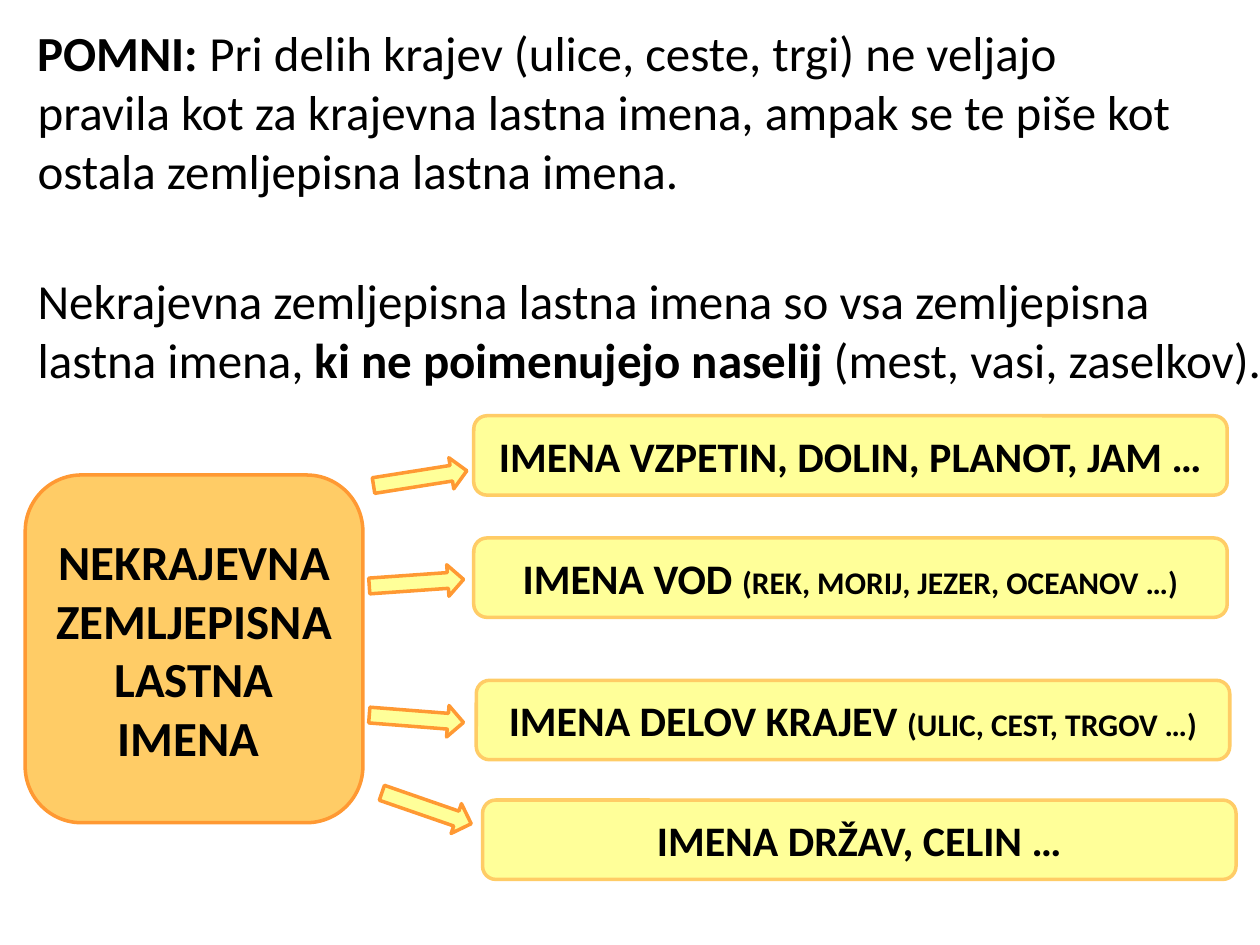
from pptx import Presentation
from pptx.dml.color import RGBColor
from pptx.enum.shapes import MSO_SHAPE
from pptx.enum.text import MSO_ANCHOR, MSO_AUTO_SIZE, PP_ALIGN
from pptx.util import Inches, Pt

ROUNDED = MSO_SHAPE.ROUNDED_RECTANGLE
ARROW = MSO_SHAPE.RIGHT_ARROW
MIDDLE = MSO_ANCHOR.MIDDLE
GROW = MSO_AUTO_SIZE.SHAPE_TO_FIT_TEXT
CENTER = PP_ALIGN.CENTER
LEFT = PP_ALIGN.LEFT

COLORS = {
    "text": "000000",
    "amber": "FFCC66",
    "orange": "FF9933",
    "yellow": "FFFF99",
}
FONT = "Calibri"

CATEGORIES = [
    (3.76, 3.3, "IMENA VZPETIN, DOLIN, PLANOT, JAM …", ""),
    (3.76, 4.27, "IMENA VOD ", "(REK, MORIJ, JEZER, OCEANOV …)"),
    (3.78, 5.4, "IMENA DELOV KRAJEV ", "(ULIC, CEST, TRGOV …)"),
    (3.83, 6.35, "IMENA DRŽAV, CELIN …", ""),
]
ARROWS = [(2.96, 3.67, 351), (2.93, 4.5, 356), (2.93, 5.58, 4.5), (3.01, 6.29, 19.1)]


def add_span(para, text, size=28, bold=False, color="text"):
    span = para.add_run()
    span.text = text
    span.font.name = FONT
    span.font.size = Pt(size)
    span.font.bold = bold
    span.font.color.rgb = RGBColor.from_string(COLORS[color])


class SlideBuilder:
    def __init__(self, slide):
        self.slide = slide

    def shape(self, kind, left, top, width, height, fill, line):
        shape = self.slide.shapes.add_shape(
            kind, Inches(left), Inches(top), Inches(width), Inches(height)
        )
        shape.shadow.inherit = False
        shape.fill.solid()
        shape.fill.fore_color.rgb = RGBColor.from_string(COLORS[fill])
        shape.line.color.rgb = RGBColor.from_string(COLORS[line])
        shape.line.width = Pt(2)
        return shape

    def fill_text(self, box, spans, align):
        box.text_frame.word_wrap = True
        para = box.text_frame.paragraphs[0]
        para.alignment = align
        for text, style in spans:
            add_span(para, text, **style)

    def panel(self, left, top, width, height, spans, fill, line):
        box = self.shape(ROUNDED, left, top, width, height, fill, line)
        box.text_frame.vertical_anchor = MIDDLE
        self.fill_text(box, spans, CENTER)

    def arrow(self, left, top, angle):
        arrow = self.shape(ARROW, left, top, 0.75, 0.25, "yellow", "orange")
        arrow.rotation = angle

    def note(self, left, top, width, height, spans):
        box = self.slide.shapes.add_textbox(
            Inches(left), Inches(top), Inches(width), Inches(height)
        )
        box.text_frame.auto_size = GROW
        self.fill_text(box, spans, LEFT)


def main():
    deck = Presentation()
    deck.slide_width = Inches(10)
    deck.slide_height = Inches(7.5)
    page = SlideBuilder(deck.slides.add_slide(deck.slide_layouts[6]))

    page.panel(
        0.2, 3.77, 2.68, 2.76,
        [("NEKRAJEVNA ZEMLJEPISNA LASTNA IMENA ", {"bold": True})],
        "amber", "orange",
    )
    for left, top, title, examples in CATEGORIES:
        spans = [(title, {"size": 24, "bold": True})]
        if examples:
            spans.append((examples, {"size": 18, "bold": True}))
        page.panel(left, top, 5.98, 0.63, spans, "yellow", "amber")
    for left, top, angle in ARROWS:
        page.arrow(left, top, angle)

    page.note(0.2, 2.1, 10.02, 1.35, [
        ("Nekrajevna zemljepisna lastna imena so vsa zemljepisna lastna imena, ", {}),
        ("ki ne poimenujejo naselij ", {"bold": True}),
        ("(mest, vasi, zaselkov).", {}),
    ])
    page.note(0.2, 0.13, 9.32, 1.51, [
        ("POMNI: ", {"bold": True}),
        ("Pri delih krajev (ulice, ceste, trgi) ne veljajo pravila kot za "
         "krajevna lastna imena, ampak se te piše kot ostala zemljepisna "
         "lastna imena.", {}),
    ])
    deck.save("out.pptx")


if __name__ == "__main__":
    main()
